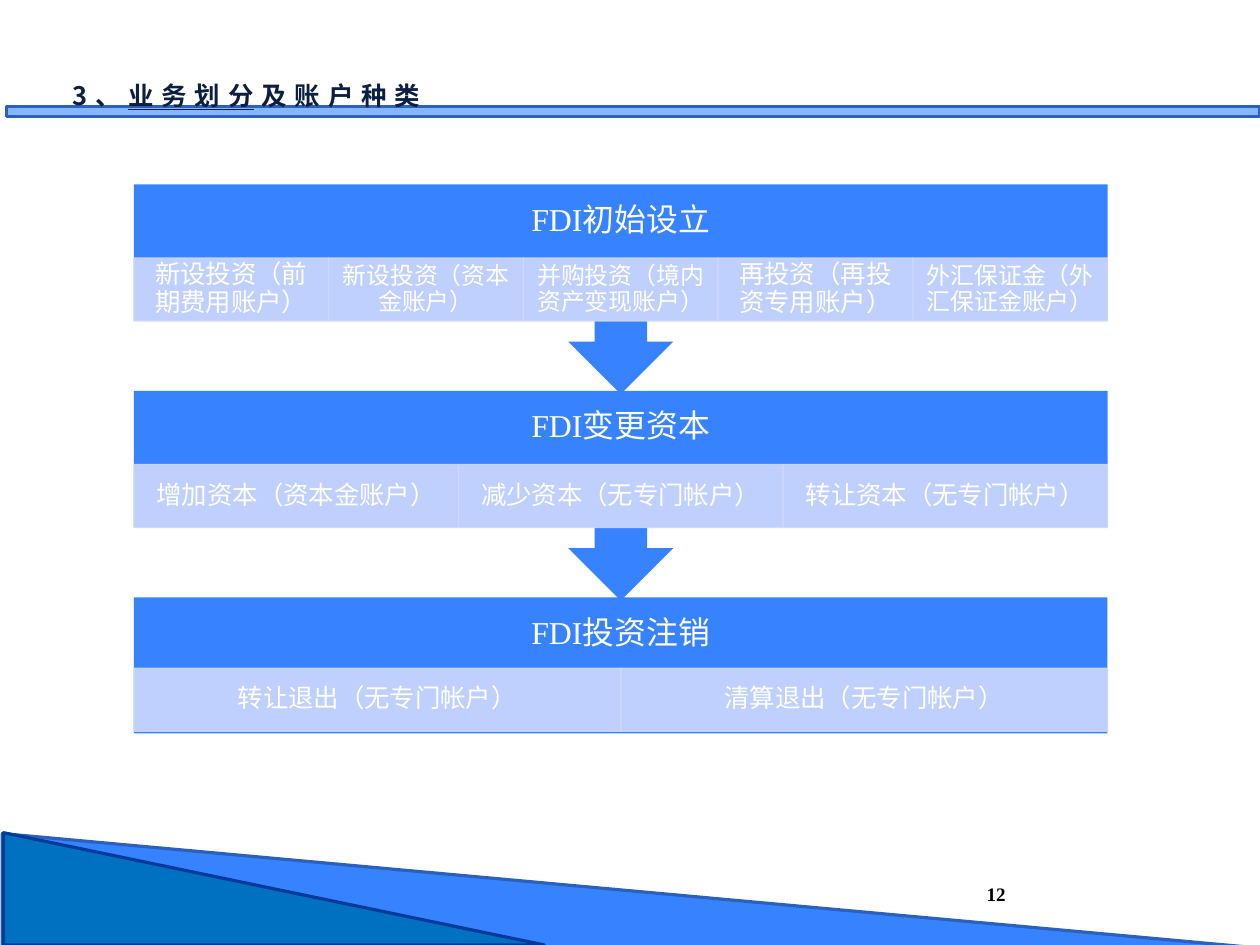
import pptx
import pptx.dml.color
import pptx.enum.shapes
import pptx.enum.text
import pptx.oxml
import pptx.oxml.ns
import pptx.util

Cm = pptx.util.Cm
Pt = pptx.util.Pt
SHAPES = pptx.enum.shapes.MSO_SHAPE
ALIGN = pptx.enum.text.PP_ALIGN
ANCHOR = pptx.enum.text.MSO_ANCHOR
AUTO_SIZE = pptx.enum.text.MSO_AUTO_SIZE

COLORS = {
    "blue": "3783FF",
    "edge": "2961BD",
    "deep": "0070C0",
    "deep_edge": "003B9B",
    "bar": "87B5FF",
    "cell": "CED9FF",
    "title": "0C1E42",
    "white": "FFFFFF",
    "black": "000000",
}
SANS = "Noto Sans CJK SC"
SERIF = "Times New Roman"

LEFT, WIDTH = 2.97, 21.59
TOP, PITCH = 4.09, 4.58
HEADER_HEIGHT, CELL_HEIGHT = 1.63, 1.4
CALLOUT_HEIGHT, LAST_HEIGHT, LAST_CELL_OFFSET = 4.65, 3.02, 1.57

STAGES = [
    ("FDI初始设立", [
        ("新设投资（前期费用账户）", 16),
        ("新设投资（资本金账户）", 15),
        ("并购投资（境内资产变现账户）", 15),
        ("再投资（再投资专用账户）", 16),
        ("外汇保证金（外汇保证金账户）", 15),
    ]),
    ("FDI变更资本", [
        ("增加资本（资本金账户）", 16),
        ("减少资本（无专门帐户）", 16),
        ("转让资本（无专门帐户）", 16),
    ]),
    ("FDI投资注销", [
        ("转让退出（无专门帐户）", 16),
        ("清算退出（无专门帐户）", 16),
    ]),
]


def rgb(name):
    return pptx.dml.color.RGBColor.from_string(COLORS[name])


def apply_format(target, values):
    for name, value in values.items():
        setattr(target, name, value)


def set_alpha(fill_element, percent):
    color = fill_element.find(".//" + pptx.oxml.ns.qn("a:srgbClr"))
    alpha = pptx.oxml.parse_xml(
        f'<a:alpha {pptx.oxml.ns.nsdecls("a")} val="{percent * 1000}"/>')
    color.append(alpha)


def add_filled_shape(slide, kind, box, fill, edge=None, edge_width=2):
    shape = slide.shapes.add_shape(kind, *map(Cm, box))
    shape.shadow.inherit = False
    shape.fill.solid()
    shape.fill.fore_color.rgb = rgb(fill)
    if edge:
        shape.line.color.rgb = rgb(edge)
        shape.line.width = Pt(edge_width)
    else:
        shape.line.fill.background()
    return shape


def set_frame(shape, horizontal, vertical, anchor, wrap=True):
    apply_format(shape.text_frame, {
        "margin_left": Cm(horizontal),
        "margin_right": Cm(horizontal),
        "margin_top": Cm(vertical),
        "margin_bottom": Cm(vertical),
        "vertical_anchor": anchor,
        "word_wrap": wrap,
    })


def add_run(paragraph, text, font, size, color, **extra):
    run = paragraph.add_run()
    run.text = text
    apply_format(run.font, {"name": font, "size": Pt(size), **extra})
    run.font.color.rgb = rgb(color)
    properties = run.font._element
    east_asian = pptx.oxml.parse_xml(
        f'<a:ea {pptx.oxml.ns.nsdecls("a")} typeface="{SANS}"/>')
    properties.find(pptx.oxml.ns.qn("a:latin")).addnext(east_asian)
    return run


def add_label(shape, text, size):
    paragraph = shape.text_frame.paragraphs[0]
    apply_format(paragraph, {"alignment": ALIGN.CENTER, "line_spacing": 0.9})
    add_run(paragraph, text, SERIF, size, "white")


def add_decoration(slide):
    triangle = SHAPES.RIGHT_TRIANGLE
    add_filled_shape(slide, triangle, (0.05, 18.49, 27.89, 2.54), "blue", "edge")
    add_filled_shape(slide, triangle, (0.08, 18.47, 11.99, 2.49), "deep", "deep_edge")
    add_filled_shape(slide, SHAPES.RECTANGLE, (0.15, 2.36, 27.79, 0.23), "bar", "edge")


def add_title(slide):
    title = slide.shapes.add_textbox(Cm(1.35), Cm(1.65), Cm(8.53), Cm(0.94))
    apply_format(title.text_frame, {
        "word_wrap": False, "auto_size": AUTO_SIZE.SHAPE_TO_FIT_TEXT})
    paragraph = title.text_frame.paragraphs[0]
    for text, underline in [("3、", False), ("业务划分", True), ("及账户种类", False)]:
        run = add_run(paragraph, text, SANS, 16, "title", bold=True, underline=underline)
        run.font._element.set("spc", "500")


def add_cell(slide, box, text, size):
    cell = add_filled_shape(slide, SHAPES.RECTANGLE, box, "cell", "cell", 0.75)
    set_alpha(cell._element.spPr.find(pptx.oxml.ns.qn("a:solidFill")), 90)
    set_alpha(cell._element.spPr.find(pptx.oxml.ns.qn("a:ln")), 90)
    set_frame(cell, 0.3, 0.05, ANCHOR.MIDDLE)
    add_label(cell, text, size)


def add_stage(slide, index, heading, cells):
    top = TOP + index * PITCH
    is_last = index == len(STAGES) - 1
    if is_last:
        add_filled_shape(slide, SHAPES.RECTANGLE, (LEFT, top, WIDTH, LAST_HEIGHT), "blue")
    else:
        callout = add_filled_shape(
            slide, SHAPES.UP_ARROW_CALLOUT, (LEFT, top, WIDTH, CALLOUT_HEIGHT), "blue")
        callout.rotation = 180

    header = slide.shapes.add_textbox(*map(Cm, (LEFT, top, WIDTH, HEADER_HEIGHT)))
    set_frame(header, 0.4, 0.4, ANCHOR.MIDDLE)
    add_label(header, heading, 20)

    cell_top = top + (LAST_CELL_OFFSET if is_last else HEADER_HEIGHT)
    cell_width = WIDTH / len(cells)
    for column, (text, size) in enumerate(cells):
        box = (LEFT + column * cell_width, cell_top, cell_width, CELL_HEIGHT)
        add_cell(slide, box, text, size)


def add_page_number(slide):
    number = slide.shapes.add_textbox(Cm(21.16), Cm(19.02), Cm(1.14), Cm(1.07))
    set_frame(number, 0, 0, ANCHOR.BOTTOM, wrap=False)
    paragraph = number.text_frame.paragraphs[0]
    paragraph.alignment = ALIGN.RIGHT
    add_run(paragraph, "12", SERIF, 12, "black", bold=True)


def main():
    presentation = pptx.Presentation()
    apply_format(presentation, {"slide_width": Cm(27.94), "slide_height": Cm(20.96)})
    slide = presentation.slides.add_slide(presentation.slide_layouts[6])
    add_decoration(slide)
    add_title(slide)
    for index, (heading, cells) in reversed(list(enumerate(STAGES))):
        add_stage(slide, index, heading, cells)
    add_page_number(slide)
    presentation.save("out.pptx")


if __name__ == "__main__":
    main()
